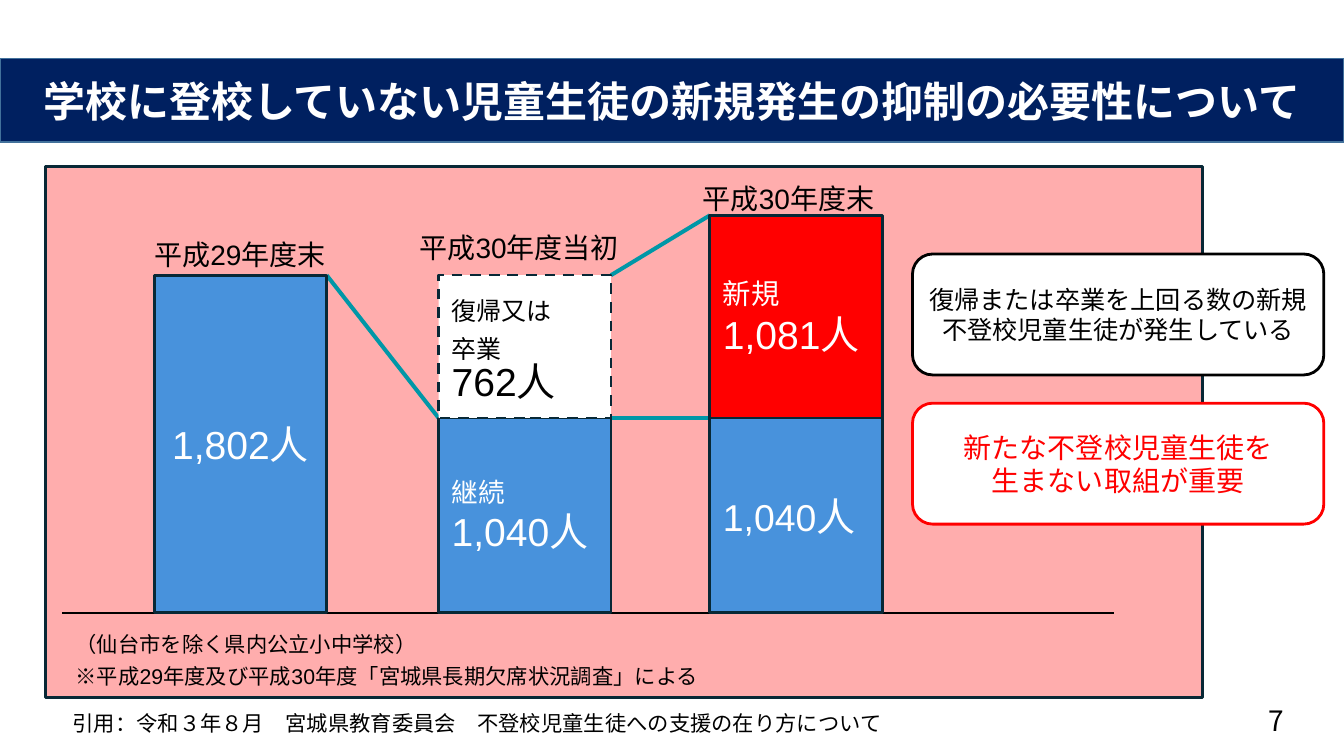
from dataclasses import dataclass

from lxml.etree import SubElement
from pptx import Presentation
from pptx.dml.color import RGBColor
from pptx.enum.dml import MSO_LINE
from pptx.enum.shapes import MSO_CONNECTOR, MSO_SHAPE
from pptx.enum.text import MSO_ANCHOR, MSO_AUTO_SIZE, PP_ALIGN
from pptx.oxml.ns import qn
from pptx.util import Inches, Pt


@dataclass(frozen=True)
class Theme:
    navy: str = "002060"
    title_edge: str = "42719B"
    pink: str = "FF9999"
    bar_edge: str = "082836"
    blue: str = "4892DC"
    red: str = "FF0000"
    teal: str = "0097A7"
    white: str = "FFFFFF"
    black: str = "000000"
    latin: str = "Arial"
    japanese: str = "Noto Sans CJK JP"
    title: float = 30
    figure: float = 27.9
    small_figure: float = 26.7
    label: float = 20
    callout: float = 18
    note: float = 15.2
    edge: float = 1.91
    link: float = 2.86


THEME = Theme()


@dataclass(frozen=True)
class Box:
    left: float
    top: float
    width: float
    height: float

    def lengths(self) -> list:
        return [Inches(v) for v in (self.left, self.top, self.width, self.height)]


@dataclass(frozen=True)
class Line:
    """One paragraph: pairs of text and size, with its line spacing."""
    runs: tuple
    spacing: float = 1.0


@dataclass(frozen=True)
class Bar:
    left: float
    base: int
    count: int
    fill: str
    lines: tuple
    color: str = THEME.white
    align: PP_ALIGN = PP_ALIGN.LEFT
    dashed: bool = False


@dataclass(frozen=True)
class Label:
    box: Box
    lines: tuple
    font: str = THEME.latin
    align: PP_ALIGN = PP_ALIGN.LEFT
    anchor: MSO_ANCHOR = MSO_ANCHOR.TOP


@dataclass(frozen=True)
class Callout:
    top: float
    color: str
    edge: str
    lines: tuple


def one(text: str, size: float, spacing: float = 1.0) -> Line:
    return Line(((text, size),), spacing)


# Bar chart geometry: people to inches
BASELINE = 6.08
BAR_WIDTH = 1.71
INCHES_PER_PERSON = 3.35 / 1802
YEAR_END_29, YEAR_START_30, YEAR_END_30 = 1.53, 4.35, 7.04
TOTAL_29, CONTINUING, RETURNED, NEW = 1802, 1040, 762, 1081

BARS = (
    Bar(YEAR_END_29, 0, TOTAL_29, THEME.blue, (one("1,802人", THEME.figure),),
        align=PP_ALIGN.CENTER),
    Bar(YEAR_START_30, 0, CONTINUING, THEME.blue,
        (one("継続", 19), one("1,040人", THEME.figure))),
    Bar(YEAR_START_30, CONTINUING, RETURNED, THEME.white,
        (one("復帰又は", 17.8, 1.27), one("卒業", 17.8, 1.27), one("762人", THEME.figure, 0.88)),
        color=THEME.black, dashed=True),
    Bar(YEAR_END_30, 0, CONTINUING, THEME.blue,
        (Line((("1,040", THEME.small_figure), ("人", THEME.figure))),)),
    Bar(YEAR_END_30, CONTINUING, NEW, THEME.red,
        (one("新規", 20.3), one("1,081人", THEME.figure))),
)

# Each link joins the right edge of one column to the left edge of the next
LINKS = (
    (YEAR_END_29, TOTAL_29, YEAR_START_30, CONTINUING),
    (YEAR_START_30, CONTINUING, YEAR_END_30, CONTINUING),
    (YEAR_START_30, TOTAL_29, YEAR_END_30, CONTINUING + NEW),
)

LABELS = (
    Label(Box(1.4, 2.31, 2.64, 0.53), (one("平成29年度末", THEME.label),)),
    Label(Box(4.03, 2.24, 2.54, 0.53), (one("平成30年度当初", THEME.label),)),
    Label(Box(6.84, 1.75, 2.64, 0.54), (one("平成30年度末", THEME.label),)),
    Label(Box(0.62, 6.15, 10.91, 0.8), (
        one("（仙台市を除く県内公立小中学校）", THEME.note, 1.25),
        one("※平成29年度及び平成30年度「宮城県長期欠席状況調査」による", THEME.note, 1.25))),
    Label(Box(0.59, 6.93, 10.7, 0.47), (
        one("引用：令和３年８月　宮城県教育委員会　不登校児童生徒への支援の在り方について",
            THEME.note, 1.25),)),
    Label(Box(12.08, 6.95, 0.75, 0.4), (one("7", THEME.label),),
          THEME.japanese, PP_ALIGN.RIGHT, MSO_ANCHOR.MIDDLE),
)

CALLOUTS = (
    Callout(2.52, THEME.black, THEME.black,
            (one("復帰または卒業を上回る数の新規不登校児童生徒が発生している", THEME.callout),)),
    Callout(4, THEME.red, THEME.red,
            (one("新たな不登校児童生徒を", THEME.label), one("生まない取組が重要", THEME.label))),
)


def rgb(color: str) -> RGBColor:
    return RGBColor.from_string(color)


def height_at(people: int) -> float:
    return BASELINE - people * INCHES_PER_PERSON


def write(shape, lines: tuple, color: str, font: str, align: PP_ALIGN,
          anchor: MSO_ANCHOR = MSO_ANCHOR.MIDDLE, side: float = 0.1,
          right: float = 0.1, bold: bool = False) -> None:
    frame = shape.text_frame
    frame_format = {
        "word_wrap": True, "auto_size": MSO_AUTO_SIZE.NONE, "vertical_anchor": anchor,
        "margin_left": Inches(side), "margin_right": Inches(right),
        "margin_top": Inches(0.05), "margin_bottom": Inches(0.05),
    }
    for name, value in frame_format.items():
        setattr(frame, name, value)
    for index, line in enumerate(lines):
        paragraph = frame.add_paragraph() if index else frame.paragraphs[0]
        paragraph.alignment = align
        paragraph.line_spacing = line.spacing
        for text, size in line.runs:
            run = paragraph.add_run()
            run.text = text
            for name, value in {"name": font, "size": Pt(size), "bold": bold}.items():
                setattr(run.font, name, value)
            run.font.color.rgb = rgb(color)
            SubElement(run.font._element, qn("a:ea"), typeface=THEME.japanese)


def paint(shape, fill: str, edge: str, width: float) -> None:
    shape.fill.solid()
    shape.fill.fore_color.rgb = rgb(fill)
    shape.line.color.rgb = rgb(edge)
    shape.line.width = Pt(width)


def add_box(slide, kind: MSO_SHAPE, box: Box, fill: str, edge: str, width: float):
    shape = slide.shapes.add_shape(kind, *box.lengths())
    shape.shadow.inherit = False
    paint(shape, fill, edge, width)
    return shape


def add_line(slide, start: tuple, end: tuple, color: str, width: float) -> None:
    connector = slide.shapes.add_connector(
        MSO_CONNECTOR.STRAIGHT, *[Inches(v) for v in start + end])
    connector.line.color.rgb = rgb(color)
    connector.line.width = Pt(width)
    SubElement(connector._element.spPr, qn("a:effectLst"))


def add_bar(slide, bar: Bar) -> None:
    box = Box(bar.left, height_at(bar.base + bar.count), BAR_WIDTH, bar.count * INCHES_PER_PERSON)
    shape = add_box(slide, MSO_SHAPE.RECTANGLE, box, bar.fill, THEME.bar_edge, THEME.edge)
    if bar.dashed:
        shape.line.dash_style = MSO_LINE.DASH
    side = 0.03 if bar.align == PP_ALIGN.CENTER else 0.13
    write(shape, bar.lines, bar.color, THEME.latin, bar.align, side=side, right=0.03)


def main() -> None:
    presentation = Presentation()
    presentation.slide_width, presentation.slide_height = Inches(13.33), Inches(7.5)
    slide = presentation.slides.add_slide(presentation.slide_layouts[5])

    # Title band
    title = slide.shapes.title
    title.left, title.top, title.width, title.height = Box(0, 0.58, 13.33, 0.83).lengths()
    paint(title, THEME.navy, THEME.title_edge, 1)
    write(title, (one("学校に登校していない児童生徒の新規発生の抑制の必要性について", THEME.title),),
          THEME.white, THEME.japanese, PP_ALIGN.CENTER, bold=True)

    # Translucent chart panel
    panel = add_box(slide, MSO_SHAPE.RECTANGLE, Box(0.45, 1.65, 11.48, 5.27),
                    THEME.pink, THEME.bar_edge, THEME.edge)
    panel_color = panel._element.spPr.find(qn("a:solidFill"))[0]
    SubElement(panel_color, qn("a:alpha"), val="80000")

    # Axis, links and bars
    add_line(slide, (0.62, BASELINE), (11.05, BASELINE), THEME.black, THEME.edge)
    for left, people, next_left, next_people in LINKS:
        add_line(slide, (left + BAR_WIDTH, height_at(people)),
                 (next_left, height_at(next_people)), THEME.teal, THEME.link)
    for bar in BARS:
        add_bar(slide, bar)

    # Labels, notes and page number
    for label in LABELS:
        text_box = slide.shapes.add_textbox(*label.box.lengths())
        write(text_box, label.lines, THEME.black, label.font, label.align, label.anchor,
              side=0.13)

    # Callouts
    for callout in CALLOUTS:
        shape = add_box(slide, MSO_SHAPE.FLOWCHART_ALTERNATE_PROCESS,
                        Box(9.05, callout.top, 4.08, 1.2), THEME.white, callout.edge, 2)
        write(shape, callout.lines, callout.color, THEME.japanese, PP_ALIGN.CENTER)

    presentation.save("out.pptx")


if __name__ == "__main__":
    main()
